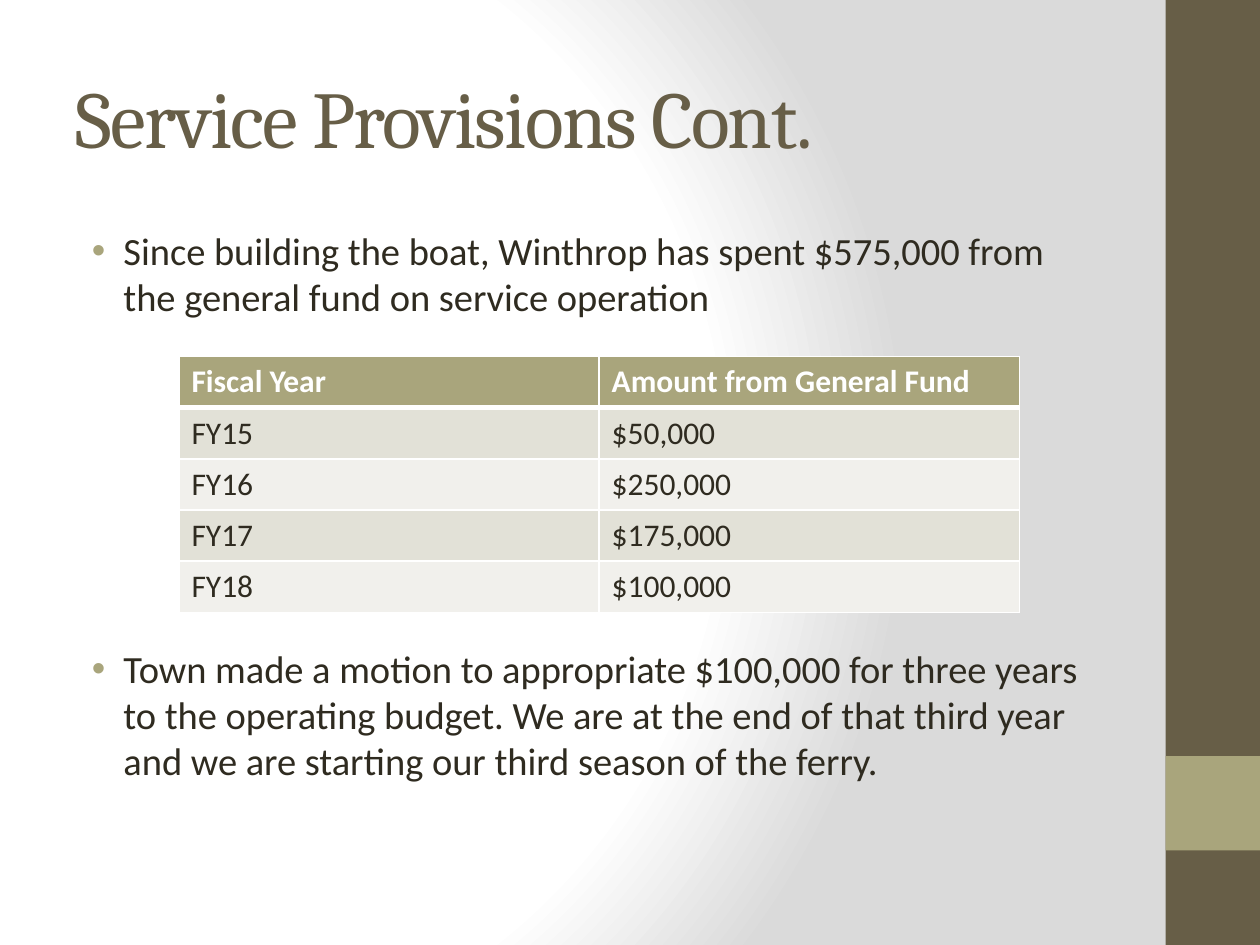
"""Build the ferry service provisions slide with its general fund table."""
import pptx
import pptx.dml.color
import pptx.enum.shapes
import pptx.enum.text
import pptx.oxml
import pptx.oxml.ns
import pptx.util
from pptx.util import Inches, Pt

RGBColor = pptx.dml.color.RGBColor
BROWN = RGBColor(0x67, 0x5E, 0x47)
OLIVE = RGBColor(0xA9, 0xA5, 0x7C)
INK = RGBColor(0x2F, 0x2B, 0x20)
WHITE = RGBColor(0xFF, 0xFF, 0xFF)
GRAY = RGBColor(0xDA, 0xDA, 0xDA)
BANDS = (RGBColor(0xE2, 0xE1, 0xD7), RGBColor(0xF1, 0xF0, 0xEC))

TITLE = "Service Provisions Cont."
POINTS = [
    ("Since building the boat, Winthrop has spent $575,000 from the general fund"
     " on service operation", 0),
    ("Town made a motion to appropriate $100,000 for three years to the operating"
     " budget. We are at the end of that third year and we are starting our third"
     " season of the ferry.", 186),
]
FUNDING = [
    ("Fiscal Year", "Amount from General Fund"),
    ("FY15", "$50,000"),
    ("FY16", "$250,000"),
    ("FY17", "$175,000"),
    ("FY18", "$100,000"),
]
SIDEBAR = [(0, 7.5, BROWN), (6, 0.75, OLIVE)]
NAMESPACE = pptx.oxml.ns.nsdecls("a")


def place(shape, left, top, width, height):
    shape.left, shape.top = Inches(left), Inches(top)
    shape.width, shape.height = Inches(width), Inches(height)


def style(paragraph, font_name, size, color, bold=False):
    font = paragraph.font
    font.name, font.size, font.bold = font_name, Pt(size), bold
    font.color.rgb = color


def paint_background(slide):
    slide.background.fill.solid()
    properties = slide.element.find(".//" + pptx.oxml.ns.qn("p:bgPr"))
    stops = "".join(
        f'<a:gs pos="{position * 1000}"><a:srgbClr val="{color}"/></a:gs>'
        for position, color in ((0, WHITE), (75, WHITE), (100, GRAY)))
    gradient = pptx.oxml.parse_xml(
        f'<a:gradFill {NAMESPACE} rotWithShape="1"><a:gsLst>{stops}</a:gsLst>'
        '<a:path path="circle"><a:fillToRect l="20000" t="50000" r="100000" b="50000"/>'
        '</a:path></a:gradFill>')
    properties.replace(properties[0], gradient)


def add_sidebar(slide):
    for top, height, color in SIDEBAR:
        bar = slide.shapes.add_shape(
            pptx.enum.shapes.MSO_SHAPE.RECTANGLE,
            Inches(9.25), Inches(top), Inches(0.75), Inches(height))
        bar.shadow.inherit = False
        bar.fill.solid()
        bar.fill.fore_color.rgb = color
        bar.line.fill.background()


def fill_title(title):
    place(title, 0.5, 0.3, 8.33, 1.25)
    title.text_frame.text = TITLE
    title.text_frame.auto_size = pptx.enum.text.MSO_AUTO_SIZE.NONE
    title.text_frame.vertical_anchor = pptx.enum.text.MSO_ANCHOR.MIDDLE
    heading = title.text_frame.paragraphs[0]
    heading.alignment = pptx.enum.text.PP_ALIGN.LEFT
    style(heading, "Cambria", 46, BROWN)
    heading.runs[0].font._element.set("spc", "-100")


def fill_points(body):
    place(body, 0.5, 1.75, 8.33, 5.42)
    body.text_frame.auto_size = pptx.enum.text.MSO_AUTO_SIZE.NONE
    body.text_frame.text = "\n".join(text for text, _ in POINTS)
    for point, (_, gap) in zip(body.text_frame.paragraphs, POINTS):
        style(point, "Calibri", 22, INK)
        point.space_before = Pt(gap)
        layout = point._p.get_or_add_pPr()
        layout.set("marL", str(Inches(0.38)))
        layout.set("indent", str(Inches(-0.25)))
        bullet = (f'<a:buClr {NAMESPACE}><a:srgbClr val="{OLIVE}"/></a:buClr>',
                  f'<a:buFont {NAMESPACE} typeface="Arial"/>',
                  f'<a:buChar {NAMESPACE} char="•"/>')
        run_defaults = layout.find(pptx.oxml.ns.qn("a:defRPr"))
        for part in bullet:
            run_defaults.addprevious(pptx.oxml.parse_xml(part))


def add_borders(cell, bottom_width):
    properties = cell._tc.get_or_add_tcPr()
    sides = (("lnL", 1), ("lnR", 1), ("lnT", 1), ("lnB", bottom_width))
    for position, (side, width) in enumerate(sides):
        properties.insert(position, pptx.oxml.parse_xml(
            f'<a:{side} {NAMESPACE} w="{Pt(width)}"><a:solidFill>'
            f'<a:srgbClr val="{WHITE}"/></a:solidFill></a:{side}>'))


def add_funding_table(slide):
    table = slide.shapes.add_table(
        len(FUNDING), len(FUNDING[0]),
        Inches(1.42), Inches(2.83), Inches(6.67), Inches(2.03)).table
    for row, values in enumerate(FUNDING):
        header = row == 0
        for column, value in enumerate(values):
            cell = table.cell(row, column)
            cell.text = value
            cell.fill.solid()
            cell.fill.fore_color.rgb = OLIVE if header else BANDS[(row - 1) % 2]
            style(cell.text_frame.paragraphs[0], "Calibri", 18,
                  WHITE if header else INK, header)
            add_borders(cell, 3 if header else 1)


def main():
    presentation = pptx.Presentation()
    presentation.slide_width, presentation.slide_height = Inches(10), Inches(7.5)
    slide = presentation.slides.add_slide(presentation.slide_layouts[1])
    paint_background(slide)
    add_sidebar(slide)
    fill_title(slide.shapes.title)
    fill_points(slide.placeholders[1])
    add_funding_table(slide)
    presentation.save("out.pptx")


if __name__ == "__main__":
    main()
